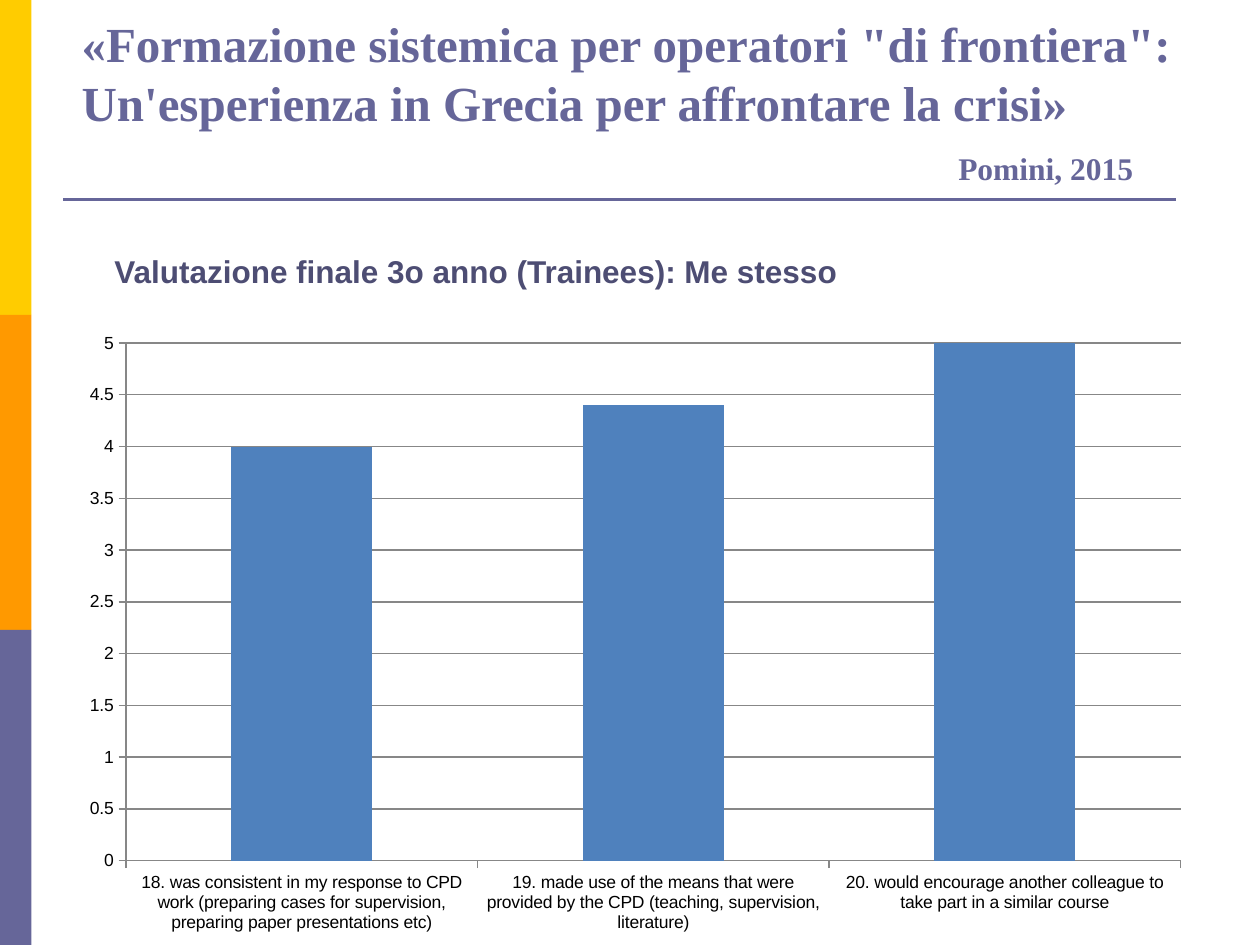
from dataclasses import dataclass

from pptx import Presentation
from pptx.chart.data import CategoryChartData as Data
from pptx.dml.color import RGBColor as Color
from pptx.enum.chart import XL_CHART_TYPE as Kind, XL_TICK_MARK as Tick
from pptx.enum.shapes import MSO_CONNECTOR as Link, MSO_SHAPE as Shape
from pptx.enum.text import MSO_ANCHOR as Anchor
from pptx.oxml import parse_xml
from pptx.oxml.ns import nsdecls, qn
from pptx.oxml.xmlchemy import OxmlElement as Node
from pptx.util import Inches, Pt


@dataclass(frozen=True)
class Theme:
    gold: str = "FFCC00"
    amber: str = "FF9900"
    slate: str = "666699"
    dusk: str = "4D4D73"
    bar: str = "4F81BD"
    grid: str = "878787"
    black: str = "000000"
    serif: str = "Times New Roman"
    sans: str = "Arial"
    title: int = 28
    head: int = 18
    label: int = 10


class Page:
    """Draws on one slide; lengths are cells of a 40 by 30 grid."""

    def __init__(self, deck, theme):
        self.deck, self.theme = deck, theme
        self.slide = deck.slides.add_slide(deck.slide_layouts[6])
        self.shapes = self.slide.shapes

    def cells(self, *spans):
        unit = self.deck.slide_width / 40
        return [round(span * unit) for span in spans]

    def font(self, font, face, size, color, bold=False):
        font.name, font.size, font.bold = face, Pt(size), bold
        font.color.rgb = Color.from_string(color)

    def block(self, box, color):
        shape = self.shapes.add_shape(Shape.RECTANGLE, *self.cells(*box))
        shape.shadow.inherit = False
        shape.fill.solid()
        shape.fill.fore_color.rgb = Color.from_string(color)
        shape.line.fill.background()

    def rule(self, ends, color, width):
        line = self.shapes.add_connector(Link.STRAIGHT, *self.cells(*ends))
        line.line.color.rgb = Color.from_string(color)
        line.line.width = Pt(width)
        line._element.spPr.append(Node("a:effectLst"))

    def text(self, box, rows, face, color, anchor=Anchor.TOP):
        """Each row is words, size, left indent in cells, points before."""
        frame = self.shapes.add_textbox(*self.cells(*box)).text_frame
        frame.word_wrap, frame.vertical_anchor = True, anchor
        for i, (words, size, indent, gap) in enumerate(rows):
            para = frame.add_paragraph() if i else frame.paragraphs[0]
            para.text = words
            para.space_before = Pt(gap)
            para._p.get_or_add_pPr().set("marL", str(self.cells(indent)[0]))
            self.font(para.font, face, size, color, bold=True)

    def columns(self, box, plot, marks, top, step):
        """Plot is the inner area as x, y, w, h shares of the chart."""
        look = self.theme
        data = Data()
        data.categories = list(marks)
        data.add_series("Series 1", list(marks.values()))
        chart = self.shapes.add_chart(
            Kind.COLUMN_CLUSTERED, *self.cells(*box), data).chart
        chart.has_legend = chart.has_title = False
        self.font(chart.font, look.sans, look.label, look.black)
        bars = chart.plots[0]
        bars.gap_width, bars.vary_by_categories = 150, False
        fill = bars.series[0].format.fill
        fill.solid()
        fill.fore_color.rgb = Color.from_string(look.bar)

        scale = chart.value_axis
        scale.minimum_scale, scale.maximum_scale = 0, top
        scale.major_unit = step
        scale.has_major_gridlines = True
        scale.tick_labels.number_format = "General"
        scale.tick_labels.number_format_is_linked = False
        for axis in (chart.category_axis, scale):
            axis.major_tick_mark = Tick.OUTSIDE
            axis.minor_tick_mark = Tick.NONE
        for part in (chart.category_axis, scale, scale.major_gridlines):
            part.format.line.color.rgb = Color.from_string(look.grid)
            part.format.line.width = Pt(0.75)

        area = chart._chartSpace.chart.plotArea
        for old in area.findall(qn("c:layout")):
            area.remove(old)
        sides = "".join(f'<c:{k}Mode val="edge"/>' for k in "xy")
        spans = "".join(f'<c:{k} val="{v}"/>' for k, v in zip("xywh", plot))
        area.insert(0, parse_xml(
            f'<c:layout {nsdecls("c")}><c:manualLayout>'
            f'<c:layoutTarget val="inner"/>{sides}{spans}'
            '</c:manualLayout></c:layout>'))


def main():
    deck = Presentation()
    deck.slide_width, deck.slide_height = Inches(10), Inches(7.5)
    look = Theme()
    page = Page(deck, look)

    for i, color in enumerate((look.gold, look.amber, look.slate)):
        page.block((0, 10 * i, 1, 10), color)
    page.rule((2, 6.33, 37.32, 6.33), look.slate, 1.5)
    page.text((2.2, 0, 36, 6.14), [
        ("«Formazione sistemica per operatori \"di frontiera\": "
         "Un'esperienza in Grecia per affrontare la crisi»",
         look.title, 0, 0),
        ("Pomini, 2015", look.head, 27.83, 10.5),
    ], look.serif, look.slate, Anchor.BOTTOM)
    page.columns((2.2, 10.1, 36, 19.8), (0.05, 0.04, 0.93, 0.83), {
        "18. was consistent in my response to CPD work (preparing cases for "
        "supervision, preparing paper presentations etc)": 4,
        "19. made use of the means that were provided by the CPD (teaching, "
        "supervision, literature)": 4.4,
        "20. would encourage another colleague to take part in a similar "
        "course": 5,
    }, top=5, step=0.5)
    page.text((3.24, 7.8, 24.4, 1.6), [
        ("Valutazione finale 3o anno (Trainees): Me stesso", look.head, 0, 0),
    ], look.sans, look.dusk)
    deck.save("out.pptx")


if __name__ == "__main__":
    main()
